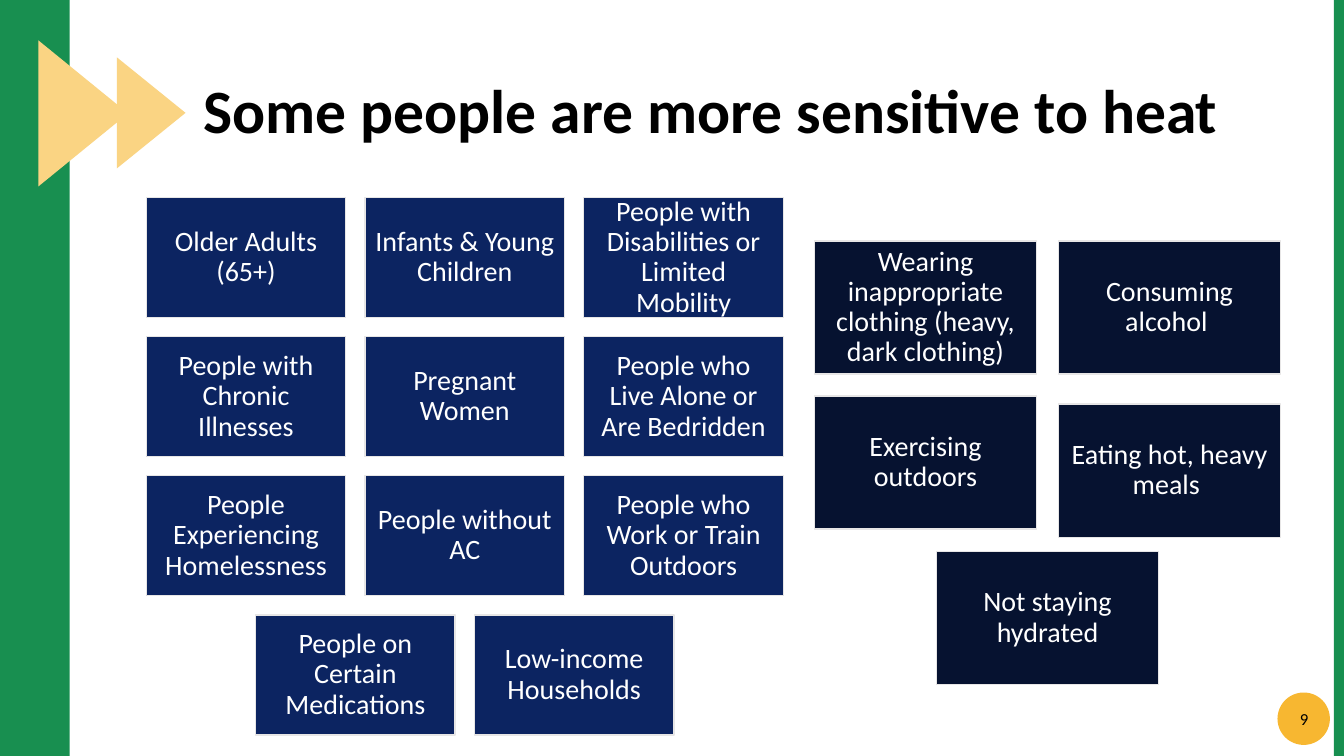
from dataclasses import dataclass

from pptx import Presentation
from pptx.dml.color import RGBColor
from pptx.enum.shapes import MSO_SHAPE
from pptx.enum.text import MSO_ANCHOR, PP_ALIGN
from pptx.shapes.autoshape import Shape
from pptx.slide import Slide
from pptx.util import Inches, Pt

RECT = MSO_SHAPE.RECTANGLE
OVAL = MSO_SHAPE.OVAL
ARROW = MSO_SHAPE.ISOSCELES_TRIANGLE
MIDDLE = MSO_ANCHOR.MIDDLE
LEFT, CENTER = PP_ALIGN.LEFT, PP_ALIGN.CENTER

FONT = "Calibri"
GREEN, GOLD, SAND = "188F50", "F7B731", "FAD483"
NAVY, NIGHT, PALE = "0C2461", "061230", "E7E6E6"
WHITE, BLACK = "FFFFFF", "000000"


@dataclass
class Box:
    left: float
    top: float
    width: float
    height: float


@dataclass
class Deco:
    kind: MSO_SHAPE
    box: Box
    fill: str
    turn: int = 0


@dataclass
class Grid:
    first: Box
    step_x: float
    step_y: float
    fill: str
    rows: list[list[str]]
    drops: dict[str, float]  # extra distance down for single cards


DECOS = [
    Deco(OVAL, Box(12.67, 6.87, 0.52, 0.52), GOLD),
    Deco(RECT, Box(13.23, 0, 0.1, 7.5), GREEN),
    Deco(RECT, Box(0, 0, 0.69, 7.5), GREEN),
    Deco(ARROW, Box(0.1, 0.68, 1.45, 0.89), SAND, 90),
    Deco(ARROW, Box(0.95, 0.78, 1.1, 0.68), SAND, 90),
]

PEOPLE = Grid(Box(1.45, 1.96, 1.98, 1.19), 2.17, 1.38, NAVY, [
    ["Older Adults (65+)", "Infants & Young Children",
     "People with Disabilities or Limited Mobility"],
    ["People with Chronic Illnesses", "Pregnant Women",
     "People who Live Alone or Are Bedridden"],
    ["People Experiencing Homelessness", "People without AC",
     "People who Work or Train Outdoors"],
    ["People on Certain Medications", "Low-income Households"],
], {})

HABITS = Grid(Box(8.08, 2.39, 2.2, 1.32), 2.42, 1.54, NIGHT, [
    ["Wearing inappropriate clothing (heavy, dark clothing)",
     "Consuming alcohol "],
    ["Exercising outdoors", "Eating hot, heavy meals "],
    ["Not staying hydrated"],
], {"Eating hot, heavy meals ": 0.08})


def color(code: str) -> RGBColor:
    return RGBColor.from_string(code)


def place(box: Box) -> list[int]:
    return [Inches(n) for n in (box.left, box.top, box.width, box.height)]


def add_form(slide: Slide, deco: Deco) -> Shape:
    form = slide.shapes.add_shape(deco.kind, *place(deco.box))
    form.shadow.inherit = False
    form.fill.solid()
    form.fill.fore_color.rgb = color(deco.fill)
    form.line.fill.background()
    form.rotation = deco.turn
    return form


def write(shape: Shape, text: str, size: int, ink: str, align: PP_ALIGN,
          bold: bool = False, inset: float | None = None) -> None:
    frame = shape.text_frame
    frame.word_wrap = True
    frame.vertical_anchor = MIDDLE
    if inset is not None:
        frame.margin_left = frame.margin_right = Inches(inset)
        frame.margin_top = frame.margin_bottom = Inches(inset)
    para = frame.paragraphs[0]
    para.alignment = align
    para.line_spacing = 0.9
    run = para.add_run()
    run.text = text
    run.font.name = FONT
    run.font.size = Pt(size)
    run.font.bold = bold
    run.font.color.rgb = color(ink)


def add_grid(slide: Slide, grid: Grid) -> None:
    first = grid.first
    most = max(len(row) for row in grid.rows)
    for y, row in enumerate(grid.rows):
        shift = (most - len(row)) / 2  # center short rows
        for x, text in enumerate(row):
            left = first.left + (x + shift) * grid.step_x
            top = first.top + y * grid.step_y + grid.drops.get(text, 0)
            box = Box(left, top, first.width, first.height)
            card = add_form(slide, Deco(RECT, box, grid.fill))
            card.line.color.rgb = color(PALE)
            card.line.width = Pt(1)
            write(card, text, 20, WHITE, CENTER, inset=0.08)


def main() -> None:
    deck = Presentation()
    deck.slide_width, deck.slide_height = Inches(13.33), Inches(7.5)
    slide = deck.slides.add_slide(deck.slide_layouts[6])

    # Side bars, arrows and number badge
    for deco in DECOS:
        add_form(slide, deco)

    # Title
    title = slide.shapes.add_textbox(*place(Box(1.92, 0.4, 10.5, 1.45)))
    write(title, "Some people are more sensitive to heat", 44, BLACK, LEFT,
          bold=True)

    # Cards
    for grid in (PEOPLE, HABITS):
        add_grid(slide, grid)

    # Slide number
    number = slide.shapes.add_textbox(*place(Box(12.73, 6.94, 0.41, 0.4)))
    write(number, "9", 12, BLACK, CENTER)

    deck.save("out.pptx")


if __name__ == "__main__":
    main()
